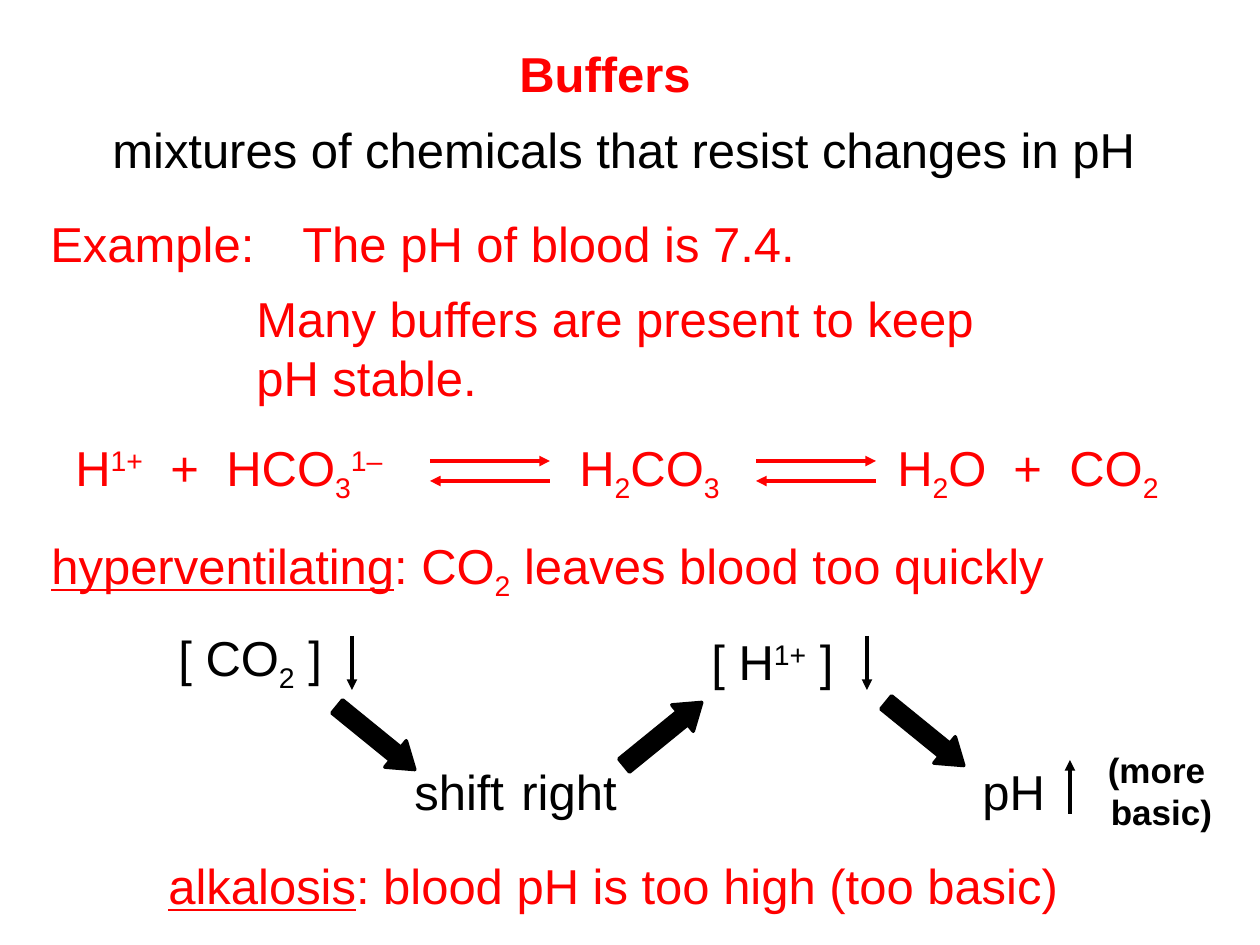
from lxml import etree
from pptx import Presentation
from pptx.dml.color import RGBColor
from pptx.enum.shapes import MSO_CONNECTOR, MSO_SHAPE
from pptx.enum.text import MSO_ANCHOR, MSO_AUTO_SIZE, PP_ALIGN
from pptx.oxml.ns import qn
from pptx.util import Pt

STRAIGHT = MSO_CONNECTOR.STRAIGHT
ARROW = MSO_SHAPE.UP_ARROW
MIDDLE = MSO_ANCHOR.MIDDLE
GROW = MSO_AUTO_SIZE.SHAPE_TO_FIT_TEXT
CENTER = PP_ALIGN.CENTER

RED, BLACK = "FF0000", "000000"
SCALE = 914400 / 126
SHIFTS = {"_": "-25000", "^": "30000"}


def px(n):
    return round(n * SCALE)


def rgb(code):
    return RGBColor.from_string(code)


def fill_line(para, line, size, color, bold):
    """Split line at | into runs; a leading _ lowers, ^ raises, ~ underlines."""
    for part in line.split("|"):
        mark = part[0] if part[0] in "_^~" else ""
        run = para.add_run()
        run.text = part[len(mark):]
        font = run.font
        font.name, font.size, font.bold = "Arial", Pt(size), bold
        font.color.rgb = rgb(color)
        if mark == "~":
            font.underline = True
        elif mark:
            run._r.get_or_add_rPr().set("baseline", SHIFTS[mark])


def add_text(slide, box, lines, color, size=28, bold=False):
    frame = slide.shapes.add_textbox(*map(px, box)).text_frame
    frame.word_wrap = False
    frame.auto_size = GROW
    frame.vertical_anchor = MIDDLE
    for i, line in enumerate(lines):
        para = frame.add_paragraph() if i else frame.paragraphs[0]
        fill_line(para, line, size, color, bold)
    return frame


def set_tabs(para, stops):
    tabs = etree.SubElement(para._p.get_or_add_pPr(), qn("a:tabLst"))
    for stop in stops:
        etree.SubElement(tabs, qn("a:tab"), pos=str(px(stop)), algn="l")


def add_line(slide, start, tip, color):
    """Draw a thin arrow from start to tip."""
    line = slide.shapes.add_connector(STRAIGHT, *map(px, start + tip))
    line.line.color.rgb = rgb(color)
    line.line.width = Pt(2)
    etree.SubElement(line.line._get_or_add_ln(), qn("a:tailEnd"), type="triangle")
    etree.SubElement(line._element.spPr, qn("a:effectLst"))


def add_arrow(slide, left, top, turn):
    """Draw a thick arrow that points up before it is turned."""
    arrow = slide.shapes.add_shape(ARROW, px(left), px(top), px(34), px(100))
    arrow.shadow.inherit = False
    arrow.adjustments[0] = 0.5
    arrow.adjustments[1] = 0.73
    arrow.rotation = turn
    arrow.fill.solid()
    arrow.fill.fore_color.rgb = rgb(BLACK)
    arrow.line.color.rgb = rgb(BLACK)
    arrow.line.width = Pt(2)


def add_intro(slide):
    add_text(slide, (507, 37, 210, 72), ["Buffers"], RED, bold=True)
    add_text(slide, (100, 113, 1065, 72),
             ["mixtures of chemicals that resist changes in pH"], BLACK)
    add_text(slide, (38, 207, 785, 72),
             ["Example:\tThe pH of blood is 7.4."], RED)
    add_text(slide, (244, 282, 784, 130),
             ["Many buffers are present to keep", "pH stable."], RED)


def add_equation(slide):
    text = "H|^1+|\t+\tHCO|_3|^1–|\tH|_2|CO|_3|\tH|_2|O\t+\tCO|_2"
    frame = add_text(slide, (63, 435, 1133, 72), [text], RED)
    set_tabs(frame.paragraphs[0], (95, 151, 504, 822, 938, 994))
    for left in (430, 756):
        right = left + 120
        add_line(slide, (left, 461), (right, 461), RED)
        add_line(slide, (right, 481), (left, 481), RED)


def add_chain(slide):
    for box, text in (
        ((166, 625, 185, 72), "[ CO|_2| ]"),
        ((402, 755, 115, 72), "shift"),
        ((509, 755, 135, 72), "right"),
        ((699, 625, 166, 72), "[ H|^1+| ]"),
        ((970, 755, 88, 72), "pH"),
    ):
        add_text(slide, box, [text], BLACK)
    for x, start, tip in ((352, 636, 690), (867, 636, 690), (1070, 814, 760)):
        add_line(slide, (x, start), (x, tip), BLACK)
    for left, top, turn in ((359, 688, 129.1), (646, 684, 50.9), (908, 684, 129.1)):
        add_arrow(slide, left, top, turn)
    note = add_text(slide, (1084, 742, 155, 97), ["(more", "basic)"],
                    BLACK, size=20, bold=True)
    note.word_wrap = True
    for para, side in zip(note.paragraphs, ("marR", "marL")):
        para.alignment = CENTER
        para._p.get_or_add_pPr().set(side, str(px(10)))


def main():
    deck = Presentation()
    deck.slide_width, deck.slide_height = px(1260), px(945)
    slide = deck.slides.add_slide(deck.slide_layouts[6])
    add_intro(slide)
    add_equation(slide)
    add_text(slide, (39, 533, 1037, 72),
             ["~hyperventilating|: CO|_2| leaves blood too quickly"], RED)
    add_chain(slide)
    add_text(slide, (156, 849, 931, 72),
             ["~alkalosis|: blood pH is too high (too basic)"], RED)
    deck.save("out.pptx")


if __name__ == "__main__":
    main()
